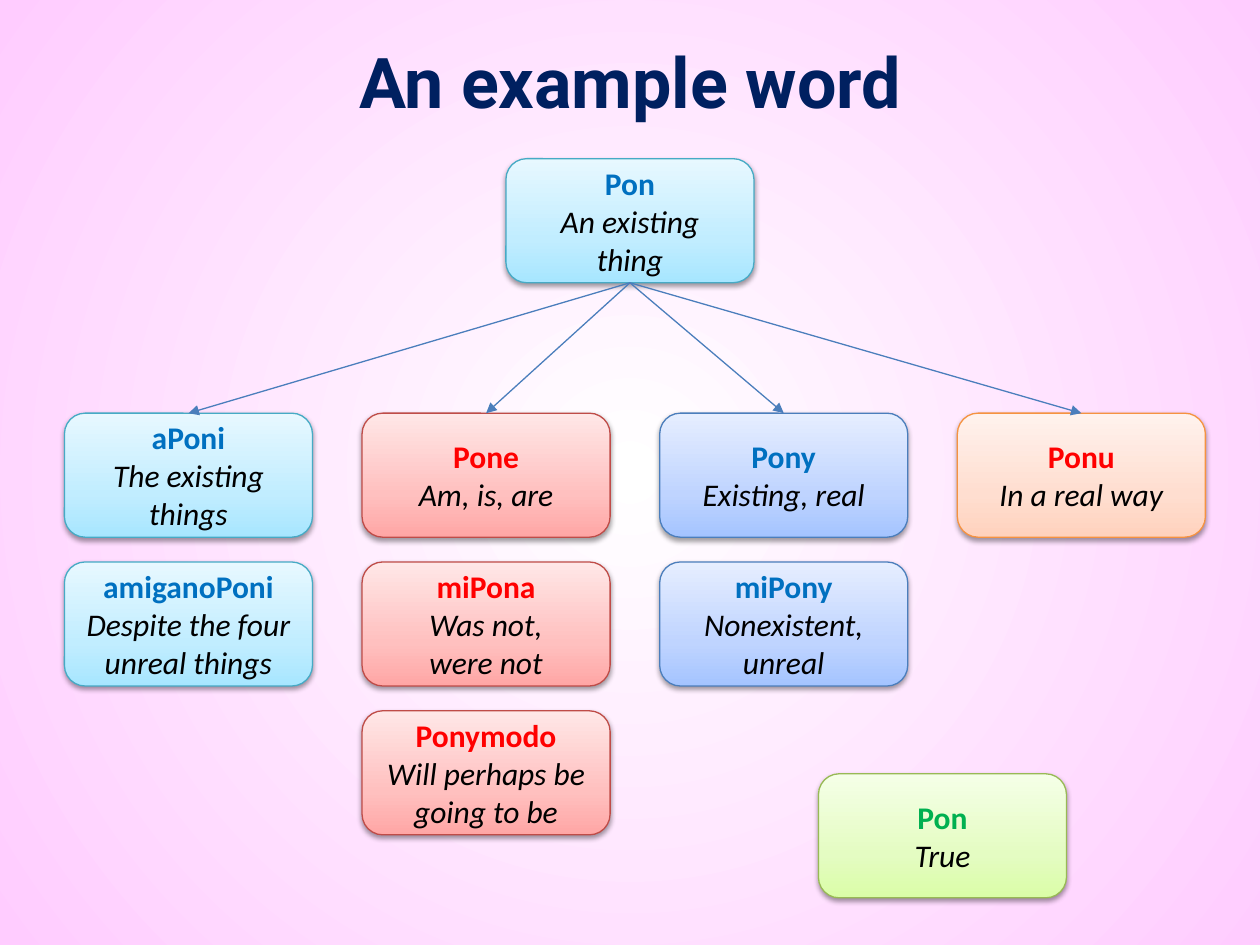
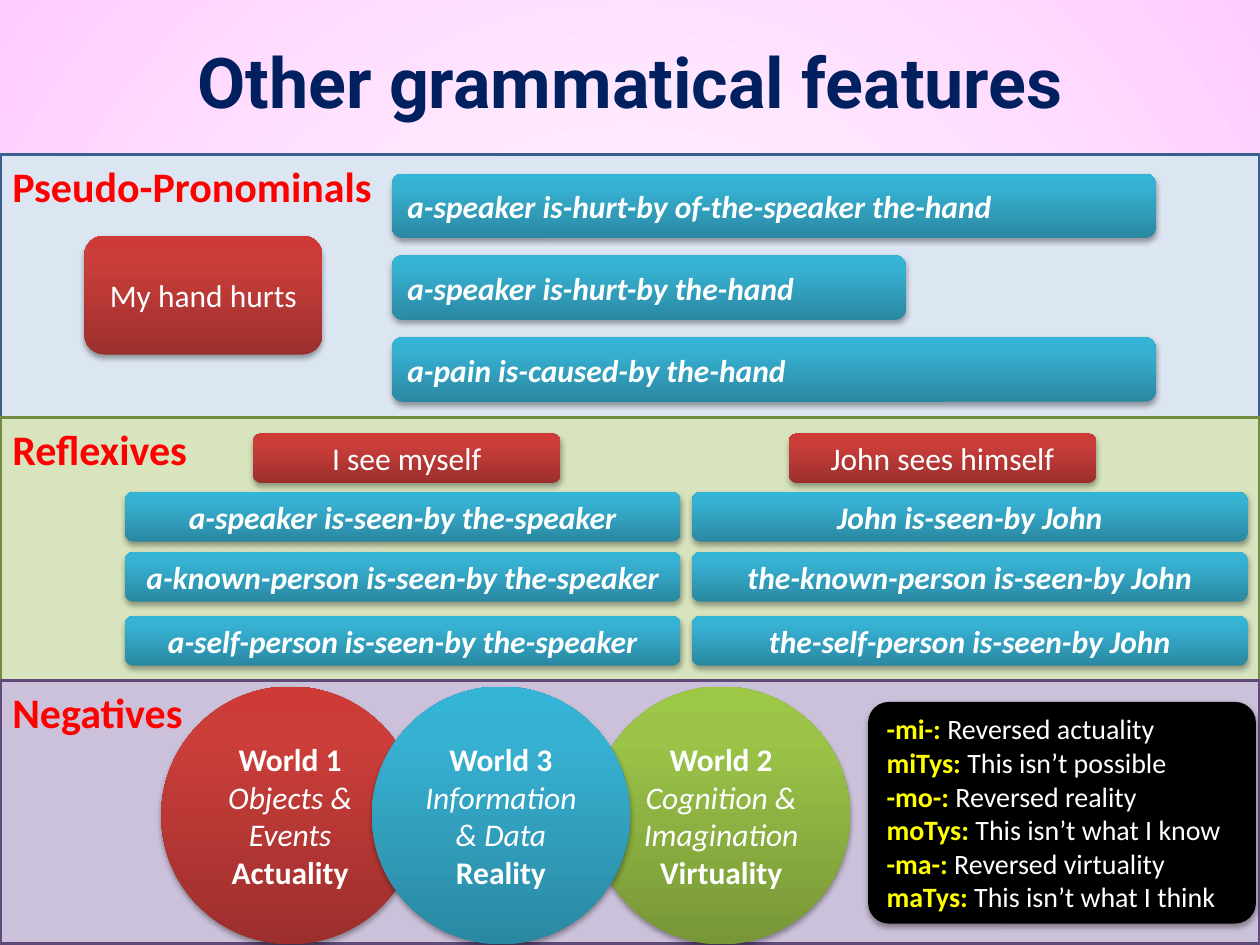
from collections import namedtuple
from dataclasses import dataclass

from pptx import Presentation
from pptx.dml.color import RGBColor
from pptx.enum.shapes import MSO_CONNECTOR as LinkKind, MSO_SHAPE as Preset
from pptx.enum.text import MSO_ANCHOR as Anchor, PP_ALIGN as Align
from pptx.oxml import parse_xml
from pptx.oxml.ns import nsdecls
from pptx.util import Cm, Pt

Look = namedtuple("Look", "size colour bold italic font", defaults=(False, False, "Calibri"))
Paint = namedtuple("Paint", "stops line", defaults=(None,))
Shadow = namedtuple("Shadow", "distance opacity")


def soft(bottom, middle, top, line):
    return Paint(((0, bottom), (35, middle), (100, top)), line)


def deep(bottom, middle, top):
    return Paint(((0, bottom), (80, middle), (100, top)))


@dataclass(frozen=True)
class Theme:
    # Type
    title = Look(40, "002060", True, font="Roboto")
    heading = Look(24, "FF0000", True)
    meaning = Look(18, "000000", italic=True)
    plain = Look(18, "FFFFFF")
    strong = Look(18, "FFFFFF", True)
    slanted = Look(18, "FFFFFF", italic=True)
    gloss = Look(18, "FFFFFF", True, True)
    affix = Look(16, "FFFF00", True)
    affix_meaning = Look(16, "FFFFFF")
    # Word colours
    noun = "0070C0"
    verb = "FF0000"
    truth = "00B050"
    # Fills
    backdrop = ((0, "FFFFFF"), (100, "FFCCFF"))
    pale_aqua = soft("A7E6FF", "C1EDFF", "E7F8FF", "46AAC5")
    pale_red = soft("FFA6A5", "FFC0BF", "FFE7E7", "BF4C48")
    pale_blue = soft("A4C4FF", "BFD4FF", "E6EEFF", "4B7EBC")
    pale_orange = soft("FFD2BD", "FFDED0", "FFF2ED", "F69240")
    pale_green = soft("DAFDA7", "E4FCC2", "F5FFE7", "98B955")
    red = deep("9C2F2D", "CB3E3A", "CE3B37")
    aqua = deep("2A88A2", "37B1D2", "34B4D6")
    green = deep("779737", "9BC348", "9DC746")
    panel = "000000"
    # Lines and shadows
    arrow = "4B7EBC"
    thin = 0.75
    band_line = 2
    soft_shadow = Shadow(20000, 38)
    deep_shadow = Shadow(23000, 35)


THEME = Theme()


# Shared helpers
def rgb(colour):
    return RGBColor.from_string(colour)


def set_gradient(owner, fill, stops, direction):
    """Fill with any number of stops; direction is the XML for its course."""
    fill.gradient()
    gradient = owner.element.xpath(".//a:gradFill")[0]
    marks = "".join(
        f'<a:gs pos="{place * 1000}"><a:srgbClr val="{colour}"/></a:gs>'
        for place, colour in stops
    )
    gradient.getparent().replace(gradient, parse_xml(
        f'<a:gradFill {nsdecls("a")} rotWithShape="1">'
        f"<a:gsLst>{marks}</a:gsLst>{direction}</a:gradFill>"
    ))


def set_shadow(shape, shadow):
    shape.shadow.inherit = False
    if shadow:
        shape.element.xpath(".//a:effectLst")[0].append(parse_xml(
            f'<a:outerShdw {nsdecls("a")} blurRad="40000" dist="{shadow.distance}" '
            f'dir="5400000" rotWithShape="0"><a:srgbClr val="000000">'
            f'<a:alpha val="{shadow.opacity * 1000}"/></a:srgbClr></a:outerShdw>'
        ))


def set_line(shape, colour, width):
    if colour is None:
        shape.line.fill.background()
    else:
        shape.line.color.rgb = rgb(colour)
        shape.line.width = Pt(width)


def write(shape, paragraphs, align=Align.CENTER, anchor=Anchor.MIDDLE):
    """Each paragraph is a list of (text, look) runs."""
    frame = shape.text_frame
    frame.word_wrap = True
    frame.vertical_anchor = anchor
    for index, runs in enumerate(paragraphs):
        paragraph = frame.add_paragraph() if index else frame.paragraphs[0]
        paragraph.alignment = align
        for text, look in runs:
            run = paragraph.add_run()
            run.text = text
            run.font.name = look.font
            run.font.size = Pt(look.size)
            run.font.bold = look.bold
            run.font.italic = look.italic
            run.font.color.rgb = rgb(look.colour)


# Kinds of element
def add_titled_slide(deck, title):
    slide = deck.slides.add_slide(deck.slide_layouts[6])
    set_gradient(
        slide, slide.background.fill, THEME.backdrop,
        '<a:path path="circle"><a:fillToRect l="50000" t="50000" r="50000" b="50000"/></a:path>',
    )
    heading = slide.shapes.add_textbox(Cm(0), Cm(0.03), deck.slide_width, Cm(3.17))
    write(heading, [[(title, THEME.title)]])
    return slide


def add_block(slide, box, paint, paragraphs, shadow=THEME.deep_shadow,
              preset=Preset.ROUNDED_RECTANGLE, align=Align.CENTER):
    block = slide.shapes.add_shape(preset, *map(Cm, box))
    set_gradient(block, block.fill, paint.stops, '<a:lin ang="16200000" scaled="0"/>')
    set_line(block, paint.line, THEME.thin)
    set_shadow(block, shadow)
    write(block, paragraphs, align)
    return block


def add_word(slide, left, top, paint, colour, word, *meanings):
    lines = [[(word, Look(18, colour, True))]]
    lines += [[(meaning, THEME.meaning)] for meaning in meanings]
    return add_block(slide, (left, top, 5, 2.5), paint, lines, THEME.soft_shadow)


def add_arrow(slide, parent, child):
    arrow = slide.shapes.add_connector(LinkKind.STRAIGHT, 0, 0, 0, 0)
    arrow.begin_connect(parent, 2)
    arrow.end_connect(child, 0)
    set_line(arrow, THEME.arrow, THEME.thin)
    arrow.line._get_or_add_ln().append(
        parse_xml(f'<a:tailEnd {nsdecls("a")} type="triangle"/>'))
    arrow.element.spPr.append(parse_xml(f'<a:effectLst {nsdecls("a")}/>'))


def add_band(slide, top, width, name, fill, line):
    band = slide.shapes.add_shape(Preset.RECTANGLE, 0, Cm(top), width, Cm(5.3))
    band.fill.solid()
    band.fill.fore_color.rgb = rgb(fill)
    set_line(band, line, THEME.band_line)
    set_shadow(band, None)
    write(band, [[(name, THEME.heading)]], Align.LEFT, Anchor.TOP)


def add_phrase(slide, box, text):
    add_block(slide, box, THEME.red, [[(text, THEME.plain)]])


def add_gloss(slide, box, text, align=Align.CENTER):
    add_block(slide, box, THEME.aqua, [[(text, THEME.gloss)]], align=align)


def add_world(slide, left, paint, name, content, quality):
    lines = [[(name, THEME.strong)], [(content, THEME.slanted)], [(quality, THEME.strong)]]
    add_block(slide, (left, 13.84, 5.2, 5.2), paint, lines, preset=Preset.OVAL)


def add_affix_panel(slide, affixes):
    panel = slide.shapes.add_shape(
        Preset.ROUNDED_RECTANGLE, Cm(17.5), Cm(14.15), Cm(7.82), Cm(4.47))
    panel.adjustments[0] = 0.094
    panel.fill.solid()
    panel.fill.fore_color.rgb = rgb(THEME.panel)
    set_line(panel, None, 0)
    set_shadow(panel, THEME.deep_shadow)
    lines = [[(f"{affix}: ", THEME.affix), (meaning, THEME.affix_meaning)]
             for affix, meaning in affixes]
    write(panel, lines, Align.LEFT)


# Slides
def build_word_tree(deck):
    slide = add_titled_slide(deck, "An example word")
    root = add_word(slide, 10.2, 3.2, THEME.pale_aqua, THEME.noun, "Pon", "An existing thing")

    # One column per word class
    columns = [
        (THEME.pale_aqua, THEME.noun, [
            ("aPoni", "The existing things"),
            ("amiganoPoni", "Despite the four unreal things")]),
        (THEME.pale_red, THEME.verb, [
            ("Pone", "Am, is, are"),
            ("miPona", "Was not,", "were not"),
            ("Ponymodo", "Will perhaps be going to be")]),
        (THEME.pale_blue, THEME.noun, [
            ("Pony", "Existing, real"),
            ("miPony", "Nonexistent, unreal")]),
        (THEME.pale_orange, THEME.verb, [("Ponu", "In a real way")]),
    ]
    for column, (paint, colour, words) in enumerate(columns):
        family = [add_word(slide, 1.3 + 6 * column, 8.33 + 3 * row, paint, colour, *word)
                  for row, word in enumerate(words)]
        add_arrow(slide, root, family[0])

    add_word(slide, 16.5, 15.6, THEME.pale_green, THEME.truth, "Pon", "True")


def build_features(deck):
    slide = add_titled_slide(deck, "Other grammatical features")
    bands = [
        ("Pseudo-Pronominals", "DCE6F2", "3A5F8C"),
        ("Reflexives", "D7E4BD", "738A42"),
        ("Negatives", "CCC1DA", "5F4A78"),
    ]
    for index, band in enumerate(bands):
        add_band(slide, 3.12 + 5.3 * index, deck.slide_width, *band)

    # Pseudo-pronominals
    add_phrase(slide, (1.7, 4.75, 4.8, 2.4), "My hand hurts")
    hand_glosses = [
        (15.4, "a-speaker is-hurt-by of-the-speaker the-hand"),
        (10.36, "a-speaker is-hurt-by the-hand"),
        (15.4, "a-pain is-caused-by the-hand"),
    ]
    for row, (width, gloss) in enumerate(hand_glosses):
        add_gloss(slide, (7.9, 3.5 + 1.65 * row, width, 1.3), gloss, Align.LEFT)

    # Reflexives
    reflexives = [
        (5.1, "I see myself", 2.52, [
            "a-speaker is-seen-by the-speaker",
            "a-known-person is-seen-by the-speaker",
            "a-self-person is-seen-by the-speaker"]),
        (15.9, "John sees himself", 13.95, [
            "John is-seen-by John",
            "the-known-person is-seen-by John",
            "the-self-person is-seen-by John"]),
    ]
    for phrase_left, phrase, gloss_left, glosses in reflexives:
        add_phrase(slide, (phrase_left, 8.74, 6.2, 1), phrase)
        for top, gloss in zip((9.92, 11.13, 12.42), glosses):
            add_gloss(slide, (gloss_left, top, 11.2, 1), gloss)

    # Negatives
    add_world(slide, 3.25, THEME.red, "World 1", "Objects & Events", "Actuality")
    add_world(slide, 11.94, THEME.green, "World 2", "Cognition & Imagination", "Virtuality")
    add_world(slide, 7.5, THEME.aqua, "World 3", "Information & Data", "Reality")
    add_affix_panel(slide, [
        ("-mi-", "Reversed actuality"),
        ("miTys", "This isn’t possible"),
        ("-mo-", "Reversed reality"),
        ("moTys", "This isn’t what I know"),
        ("-ma-", "Reversed virtuality"),
        ("maTys", "This isn’t what I think"),
    ])


def main():
    deck = Presentation()
    deck.slide_width, deck.slide_height = Cm(25.4), Cm(19.05)
    build_word_tree(deck)
    build_features(deck)
    deck.save("out.pptx")


if __name__ == "__main__":
    main()
